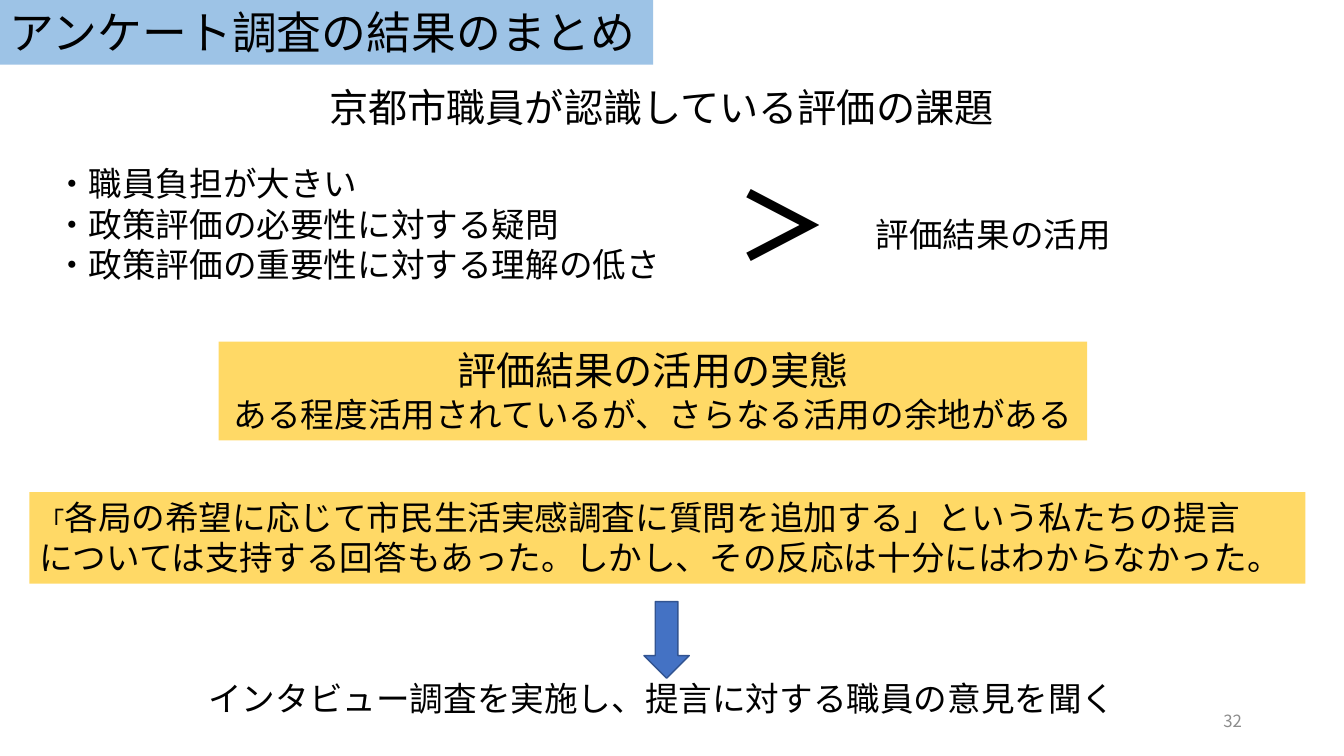
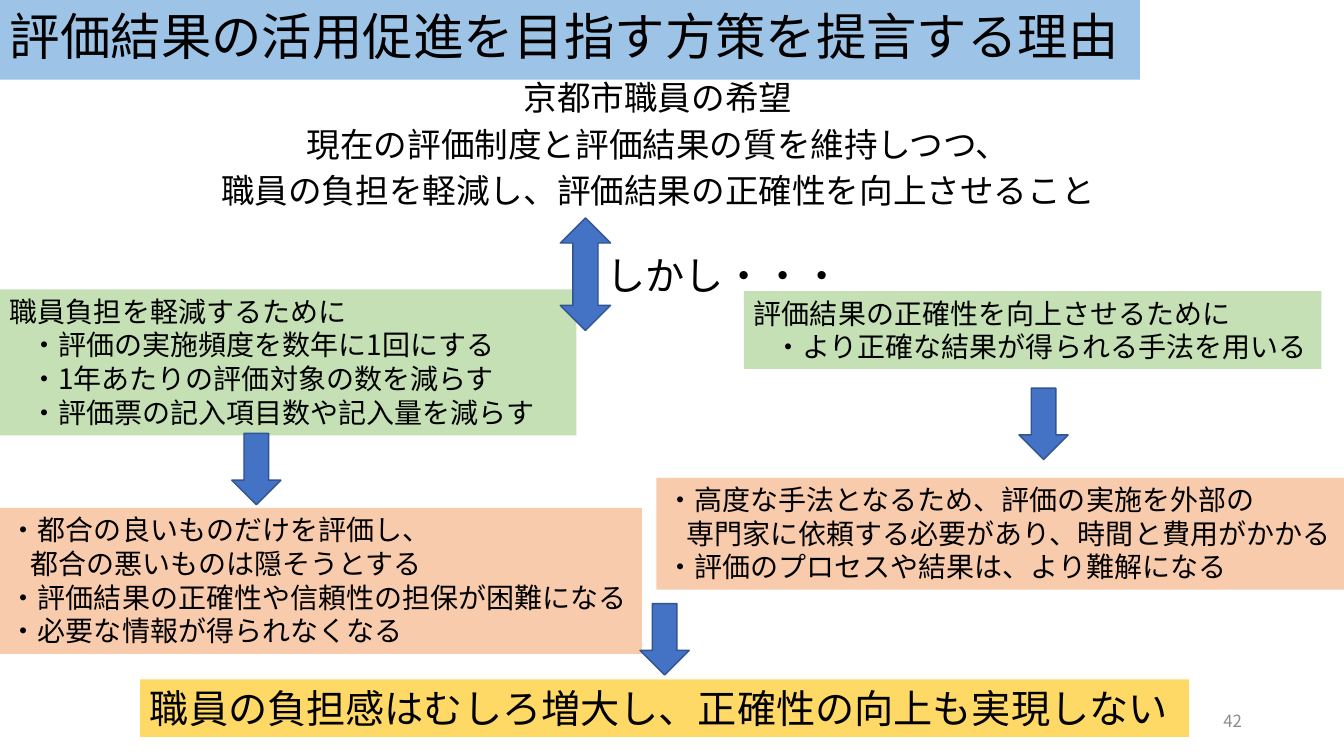
from dataclasses import dataclass

from pptx import Presentation
from pptx.dml.color import RGBColor
from pptx.enum import shapes, text
from pptx.oxml import ns, xmlchemy
from pptx.util import Cm, Pt


@dataclass(frozen=True)
class Theme:
    font: str = "Noto Sans CJK JP"
    ink: str = "000000"
    muted: str = "8C8C8C"
    title_band: str = "9DC3E6"
    finding: str = "FFD966"
    measure: str = "C5E0B4"
    drawback: str = "F8CBAD"
    arrow: str = "4472C4"
    arrow_edge: str = "325491"
    number: float = 12
    detail: float = 20
    body: float = 24
    key: float = 28
    sign: float = 66
    leading: float = 1.2
    indent: float = 0.51


@dataclass(frozen=True)
class Line:
    """One paragraph; lead is an opening mark in its own smaller size."""
    words: str
    size: float = 0
    indented: bool = False
    lead: str = ""
    lead_size: float = 18


@dataclass(frozen=True)
class Block:
    """A text area: left, top, width, height in cm."""
    place: tuple
    lines: list
    size: float
    fill: str = ""
    centred: bool = False
    bold: bool = False
    leading: float = 1.2
    gap: float = 0


THEME = Theme()
DOWN = shapes.MSO_SHAPE.DOWN_ARROW
UP_DOWN = shapes.MSO_SHAPE.UP_DOWN_ARROW
STEP_ARROW = (1.24, 1.8)

# Content
SLIDES = [
    dict(
        title="アンケート調査の結果のまとめ",
        title_size=32,
        band=(16.46, 1.63),
        number="32",
        blocks=[
            Block((5.51, 8.61, 21.89, 2.49),
                  [Line("評価結果の活用の実態", THEME.key),
                   Line("ある程度活用されているが、さらなる活用の余地がある")],
                  THEME.body, THEME.finding, centred=True),
            Block((0.74, 12.4, 32.16, 2.31),
                  [Line("各局の希望に応じて市民生活実感調査に質問を追加する」という私たちの提言", lead="「"),
                   Line("については支持する回答もあった。しかし、その反応は十分にはわからなかった。")],
                  THEME.body, THEME.finding),
            Block((5, 16.97, 23.6, 1.27),
                  [Line("インタビュー調査を実施し、提言に対する職員の意見を聞く")], THEME.body),
            Block((1.14, 3.99, 15.9, 3.33),
                  [Line("・職員負担が大きい"),
                   Line("・政策評価の必要性に対する疑問"),
                   Line("・政策評価の重要性に対する理解の低さ")], THEME.body),
            Block((21.82, 5.26, 6.5, 1.27), [Line("評価結果の活用")], THEME.body),
            Block((18.31, 4.11, 2.87, 3.07), [Line("＞")], THEME.sign, bold=True),
            Block((8.05, 1.98, 17.48, 1.45),
                  [Line("京都市職員が認識している評価の課題")], THEME.key),
        ],
        arrows=[(DOWN, 16.23, 15.16, 1.14, 1.93)],
    ),
    dict(
        title="評価結果の活用促進を目指す方策を提言する理由",
        title_size=36,
        band=(28.73, 2.01),
        number="42",
        blocks=[
            Block((2.46, 2.03, 28.24, 3.66),
                  [Line("京都市職員の希望"),
                   Line("現在の評価制度と評価結果の質を維持しつつ、"),
                   Line("職員の負担を軽減し、評価結果の正確性を向上させること")],
                  THEME.body, centred=True, leading=0.96, gap=10),
            Block((0, 7.29, 14.53, 3.68),
                  [Line("職員負担を軽減するために"),
                   Line("・評価の実施頻度を数年に1回にする", indented=True),
                   Line("・1年あたりの評価対象の数を減らす", indented=True),
                   Line("・評価票の記入項目数や記入量を減らす", indented=True)],
                  THEME.detail, THEME.measure),
            Block((18.75, 7.34, 14.55, 1.96),
                  [Line("評価結果の正確性を向上させるために"),
                   Line("・より正確な結果が得られる手法を用いる", indented=True)],
                  THEME.detail, THEME.measure),
            Block((0, 12.8, 16.18, 3.68),
                  [Line("・都合の良いものだけを評価し、"),
                   Line("都合の悪いものは隠そうとする", indented=True),
                   Line("・評価結果の正確性や信頼性の担保が困難になる"),
                   Line("・必要な情報が得られなくなる")],
                  THEME.detail, THEME.drawback),
            Block((16.54, 12.04, 17.33, 2.82),
                  [Line("・高度な手法となるため、評価の実施を外部の"),
                   Line("専門家に依頼する必要があり、時間と費用がかかる", indented=True),
                   Line("・評価のプロセスや結果は、より難解になる")],
                  THEME.detail, THEME.drawback),
            Block((3.53, 17.12, 26.44, 1.45),
                  [Line("職員の負担感はむしろ増大し、正確性の向上も実現しない")],
                  THEME.key, THEME.finding),
            Block((15.04, 6.22, 6.5, 1.45), [Line("しかし・・・")], THEME.key),
        ],
        arrows=[
            (DOWN, 5.84, 10.92, *STEP_ARROW),
            (DOWN, 25.68, 9.78, *STEP_ARROW),
            (DOWN, 16.13, 15.21, *STEP_ARROW),
            (UP_DOWN, 14.12, 5.49, 1.27, 2.84),
        ],
    ),
]


def set_font(paragraph, size, colour=THEME.ink, bold=False):
    font = paragraph.font
    font.size, font.bold = Pt(size), bold
    font.color.rgb = RGBColor.from_string(colour)
    font.name = THEME.font
    # East Asian glyphs take their typeface from a:ea
    east_asian = xmlchemy.OxmlElement("a:ea")
    east_asian.set("typeface", THEME.font)
    paragraph._p.pPr.find(ns.qn("a:defRPr")).append(east_asian)


def add_block(slide, block):
    place = [Cm(length) for length in block.place]
    if block.fill:
        area = slide.shapes.add_shape(shapes.MSO_SHAPE.RECTANGLE, *place)
        area.shadow.inherit = False
        area.fill.solid()
        area.fill.fore_color.rgb = RGBColor.from_string(block.fill)
        area.line.fill.background()
    else:
        area = slide.shapes.add_textbox(*place)
    frame = area.text_frame
    frame.word_wrap = True
    frame.vertical_anchor = text.MSO_ANCHOR.TOP
    for index, line in enumerate(block.lines):
        paragraph = frame.paragraphs[0] if index == 0 else frame.add_paragraph()
        size = line.size or block.size
        paragraph.alignment = text.PP_ALIGN.CENTER if block.centred else text.PP_ALIGN.LEFT
        paragraph.line_spacing = Pt(round(size * block.leading, 1))
        if index and block.gap:
            paragraph.space_before = Pt(block.gap)
        if line.indented:
            paragraph._p.get_or_add_pPr().set("marL", str(Cm(THEME.indent)))
        if line.lead:
            lead = paragraph.add_run()
            lead.text = line.lead
            lead.font.size = Pt(line.lead_size)
        paragraph.add_run().text = line.words
        set_font(paragraph, size, bold=block.bold)


def add_arrow(slide, direction, *place):
    arrow = slide.shapes.add_shape(direction, *[Cm(length) for length in place])
    arrow.shadow.inherit = False
    arrow.fill.solid()
    arrow.fill.fore_color.rgb = RGBColor.from_string(THEME.arrow)
    arrow.line.color.rgb = RGBColor.from_string(THEME.arrow_edge)
    arrow.line.width = Pt(1)


def add_number(slide, number):
    frame = slide.shapes.add_textbox(Cm(23.93), Cm(17.65), Cm(7.62), Cm(1.02)).text_frame
    frame.word_wrap = True
    frame.vertical_anchor = text.MSO_ANCHOR.MIDDLE
    paragraph = frame.paragraphs[0]
    paragraph.text = number
    paragraph.alignment = text.PP_ALIGN.RIGHT
    set_font(paragraph, THEME.number, THEME.muted)


def main():
    deck = Presentation()
    deck.slide_width, deck.slide_height = Cm(33.87), Cm(19.05)
    for content in SLIDES:
        slide = deck.slides.add_slide(deck.slide_layouts[6])
        add_number(slide, content["number"])
        # Title band, then text areas, then arrows on top
        band = Block((0, 0, *content["band"]), [Line(content["title"])],
                     content["title_size"], THEME.title_band)
        for block in [band, *content["blocks"]]:
            add_block(slide, block)
        for arrow in content["arrows"]:
            add_arrow(slide, *arrow)
    deck.save("out.pptx")


if __name__ == "__main__":
    main()
